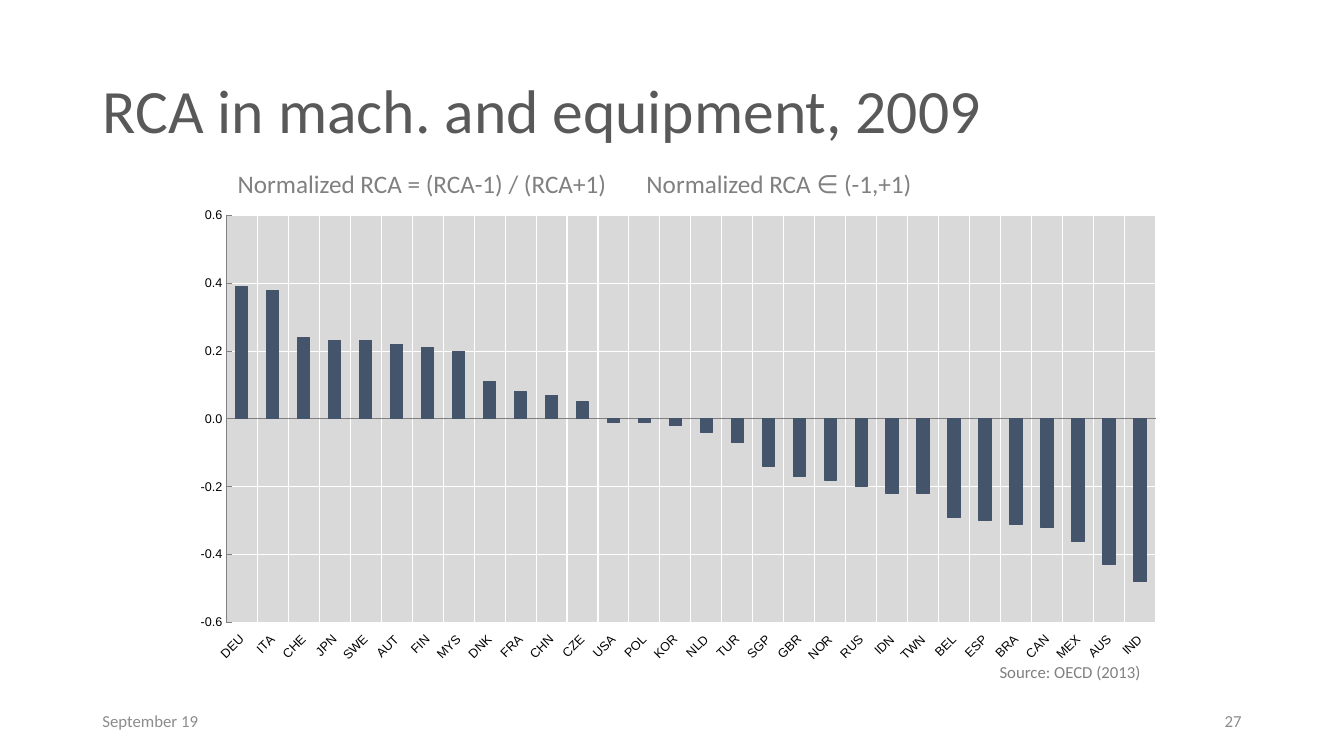
from lxml import etree
from pptx import Presentation
from pptx.chart.data import CategoryChartData
from pptx.dml.color import RGBColor
from pptx.enum.chart import XL_CHART_TYPE, XL_TICK_LABEL_POSITION, XL_TICK_MARK
from pptx.enum.text import MSO_ANCHOR, PP_ALIGN
from pptx.oxml import parse_xml
from pptx.oxml.ns import nsdecls, qn
from pptx.util import Cm, Pt

COLUMNS = XL_CHART_TYPE.COLUMN_CLUSTERED
LABELS_LOW = XL_TICK_LABEL_POSITION.LOW
TICK_NONE, TICK_IN = XL_TICK_MARK.NONE, XL_TICK_MARK.INSIDE
LEFT, RIGHT = PP_ALIGN.LEFT, PP_ALIGN.RIGHT
TOP, MIDDLE = MSO_ANCHOR.TOP, MSO_ANCHOR.MIDDLE
TITLE_ONLY = 5

RCA = {
    "DEU": 0.39, "ITA": 0.38, "CHE": 0.24, "JPN": 0.23, "SWE": 0.23, "AUT": 0.22,
    "FIN": 0.21, "MYS": 0.2, "DNK": 0.11, "FRA": 0.08, "CHN": 0.07, "CZE": 0.05,
    "USA": -0.01, "POL": -0.01, "KOR": -0.02, "NLD": -0.04, "TUR": -0.07, "SGP": -0.14,
    "GBR": -0.17, "NOR": -0.18, "RUS": -0.2, "IDN": -0.22, "TWN": -0.22, "BEL": -0.29,
    "ESP": -0.3, "BRA": -0.31, "CAN": -0.32, "MEX": -0.36, "AUS": -0.43, "IND": -0.48,
}


def rgb(hex_string):
    return RGBColor.from_string(hex_string)


class SlideBuilder:
    text_font, chart_font = "Calibri", "Arial"
    title_color, note_color, footer_color = "595959", "808080", "8C8C8C"
    bar_color, plot_color, grid_color, axis_color = "44546A", "D9D9D9", "FFFFFF", "808080"

    def __init__(self, slide):
        self.s = slide

    def fill_text(self, sp, text, size, color, align, anchor):
        tf = sp.text_frame
        tf.word_wrap = True
        tf.vertical_anchor = anchor
        p = tf.paragraphs[0]
        p.text = text
        p.alignment = align
        p.font.name, p.font.size = self.text_font, Pt(size)
        p.font.color.rgb = rgb(color)
        return p

    def title(self, text, box):
        sp = self.s.shapes.title
        sp.left, sp.top, sp.width, sp.height = map(Cm, box)
        p = self.fill_text(sp, text, 44, self.title_color, LEFT, MIDDLE)
        p.line_spacing = 0.9

    def text(self, text, box, size, color, align=LEFT, anchor=TOP):
        sp = self.s.shapes.add_textbox(*map(Cm, box))
        self.fill_text(sp, text, size, color, align, anchor)

    def column_chart(self, name, values, box, plot, limit, step):
        data = CategoryChartData(number_format="0.00")
        data.categories = list(values)
        data.add_series(name, list(values.values()))
        chart = self.s.shapes.add_chart(COLUMNS, *map(Cm, box), data).chart
        chart.has_legend = chart.has_title = False
        chart.font.name, chart.font.size = self.chart_font, Pt(9)
        chart.font.color.rgb = rgb("000000")

        # Bars
        bars = chart.plots[0]
        bars.gap_width, bars.vary_by_categories = 150, False
        series = bars.series[0]
        series.invert_if_negative = False
        series.format.fill.solid()
        series.format.fill.fore_color.rgb = rgb(self.bar_color)
        series.format.line.color.rgb = rgb(self.bar_color)
        series.format.line.width = Pt(0.75)

        # Axes
        cat, val = chart.category_axis, chart.value_axis
        for axis, tick in ((cat, TICK_NONE), (val, TICK_IN)):
            axis.major_tick_mark, axis.minor_tick_mark = tick, TICK_NONE
            axis.has_major_gridlines = True
            for line, color in ((axis.major_gridlines.format.line, self.grid_color),
                                (axis.format.line, self.axis_color)):
                line.color.rgb = rgb(color)
                line.width = Pt(0.75)
            font = axis.tick_labels.font
            font.name, font.size = self.chart_font, Pt(9)
            font.color.rgb = rgb("000000")
        cat.tick_label_position = LABELS_LOW
        val.minimum_scale, val.maximum_scale, val.major_unit = -limit, limit, step
        val.tick_labels.number_format = "0.0"
        val.tick_labels.number_format_is_linked = False

        # Slanted country codes, plot position and plot background
        root = chart.element
        root.find(".//" + qn("c:catAx")).find(".//" + qn("a:bodyPr")).set("rot", "-2700000")
        area = root.find(".//" + qn("c:plotArea"))
        for old in area.findall(qn("c:layout")):
            area.remove(old)
        layout = parse_xml(f"<c:layout {nsdecls('c')}/>")
        manual = etree.SubElement(layout, qn("c:manualLayout"))
        settings = [("layoutTarget", "inner"), ("xMode", "edge"), ("yMode", "edge")]
        for tag, value in settings + list(zip("xywh", plot)):
            etree.SubElement(manual, qn("c:" + tag)).set("val", str(value))
        area.insert(0, layout)
        area.append(parse_xml(
            f"<c:spPr {nsdecls('c', 'a')}><a:solidFill>"
            f'<a:srgbClr val="{self.plot_color}"/></a:solidFill></c:spPr>'))


def main():
    prs = Presentation()
    prs.slide_width, prs.slide_height = Cm(33.87), Cm(19.05)
    b = SlideBuilder(prs.slides.add_slide(prs.slide_layouts[TITLE_ONLY]))

    # Title and footer
    b.title("RCA in mach. and equipment, 2009", (2.33, 1.01, 29.21, 3.68))
    b.text("27", (23.92, 17.66, 7.62, 1.01), 12, b.footer_color, RIGHT, MIDDLE)
    b.text("September 19", (2.33, 17.66, 7.62, 1.01), 12, b.footer_color, LEFT, MIDDLE)

    # Chart with its definition and source
    b.column_chart("Normalized RCA", RCA, (4.23, 3.94, 25.4, 13.2),
                   plot=(0.058, 0.113, 0.922, 0.777), limit=0.6, step=0.2)
    b.text("Normalized RCA = (RCA-1) / (RCA+1) \t Normalized RCA ∈ (-1,+1)",
           (5.74, 4.11, 23.4, 1.03), 18, b.note_color)
    b.text("Source: OECD (2013)", (24.94, 16.56, 4.4, 0.77), 12, b.note_color)

    prs.save("out.pptx")


if __name__ == "__main__":
    main()
